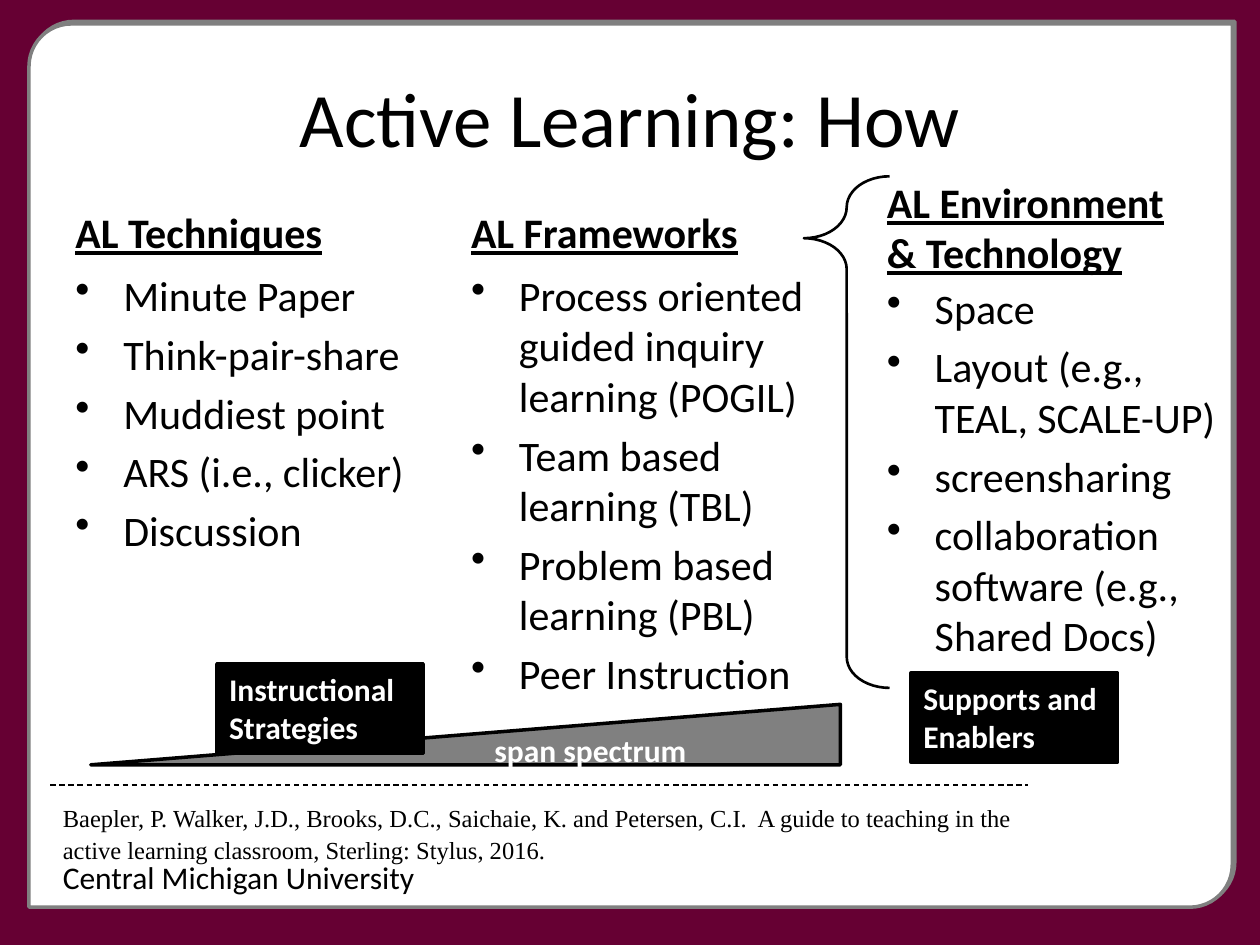
import pptx
import pptx.util
import pptx.dml.color
import pptx.enum.dml
import pptx.enum.shapes
import pptx.enum.text
import pptx.oxml.ns
import lxml.etree

Inches = pptx.util.Inches
Pt = pptx.util.Pt
SHAPE = pptx.enum.shapes.MSO_SHAPE
ANCHOR = pptx.enum.text.MSO_ANCHOR
ALIGN = pptx.enum.text.PP_ALIGN
FIT = pptx.enum.text.MSO_AUTO_SIZE.SHAPE_TO_FIT_TEXT

COLORS = {
    "maroon": "660033",
    "white": "FFFFFF",
    "gray": "808080",
    "black": "000000",
}
BODY = {"name": "Calibri", "size": Pt(24)}
HEADING = {**BODY, "bold": True, "underline": True}
LABEL = {"name": "Calibri", "size": Pt(18), "bold": True}

# Heading, heading place, list place, list items
COLUMNS = [
    ("AL Techniques", (0.5, 1.39, 3.02, 0.7), (0.5, 2.09, 2.82, 4.32),
     ["Minute Paper", "Think-pair-share", "Muddiest point",
      "ARS (i.e., clicker)", "Discussion"]),
    ("AL Frameworks", (3.64, 1.39, 2.68, 0.7), (3.64, 2.09, 2.92, 4.32),
     ["Process oriented guided inquiry learning (POGIL)",
      "Team based learning (TBL)", "Problem based learning (PBL)",
      "Peer Instruction"]),
    ("AL Environment & Technology", (6.94, 1.55, 2.68, 0.7),
     (6.94, 2.19, 2.82, 4.32),
     ["Space", "Layout (e.g., TEAL, SCALE-UP)", "screensharing",
      "collaboration software (e.g., Shared Docs)"]),
]
REFERENCE = (
    "Baepler, P. Walker, J.D., Brooks, D.C., Saichaie, K. and Petersen, C.I.  "
    "A guide to teaching in the active learning classroom, "
    "Sterling: Stylus, 2016."
)


def rgb(name):
    return pptx.dml.color.RGBColor.from_string(COLORS[name])


def apply_format(target, values):
    for name, value in values.items():
        setattr(target, name, value)


def add_bullet(para):
    properties = para._p.get_or_add_pPr()
    properties.set("marL", str(Inches(0.38)))
    properties.set("indent", str(-Inches(0.38)))
    bullet = lxml.etree.SubElement(properties, pptx.oxml.ns.qn("a:buChar"))
    bullet.set("char", "•")


def write_text(shape, lines, font, color="black", frame=None, para_format=None,
               bullets=False):
    text_frame = shape.text_frame
    apply_format(text_frame, {"word_wrap": True, **(frame or {})})
    for index, line in enumerate(lines):
        para = text_frame.add_paragraph() if index else text_frame.paragraphs[0]
        if bullets:
            add_bullet(para)
        if index:
            para.space_before = Pt(4.8)
        apply_format(para, {"alignment": ALIGN.LEFT, **(para_format or {})})
        span = para.add_run()
        span.text = line
        apply_format(span.font, font)
        span.font.color.rgb = rgb(color)


def add_text(shapes, place, lines, font, **options):
    box = shapes.add_textbox(*map(Inches, place))
    write_text(box, lines, font, **options)
    return box


def add_shape(page, kind, place, fill=None, line="black", width=2, adjust=()):
    shape = page.shapes.add_shape(kind, *map(Inches, place))
    shape.shadow.inherit = False
    for index, value in enumerate(adjust):
        shape.adjustments[index] = value
    if fill:
        shape.fill.solid()
        shape.fill.fore_color.rgb = rgb(fill)
    else:
        shape.fill.background()
    shape.line.color.rgb = rgb(line)
    shape.line.width = Pt(width)
    return shape


def add_dashed_line(shapes, start, end):
    line = shapes.add_connector(
        pptx.enum.shapes.MSO_CONNECTOR.STRAIGHT, *map(Inches, start + end))
    line.line.color.rgb = rgb("black")
    line.line.width = Pt(0.75)
    line.line.dash_style = pptx.enum.dml.MSO_LINE.DASH
    lxml.etree.SubElement(line._element.spPr, pptx.oxml.ns.qn("a:effectLst"))


def add_label(page, place, text):
    label = add_shape(page, SHAPE.RECTANGLE, place, fill="black")
    write_text(label, [text], LABEL, color="white",
               frame={"auto_size": FIT, "vertical_anchor": ANCHOR.TOP})


def main():
    deck = pptx.Presentation()
    deck.slide_width, deck.slide_height = Inches(10), Inches(7.5)
    page = deck.slides.add_slide(deck.slide_layouts[6])

    # Backdrop and footer
    page.background.fill.solid()
    page.background.fill.fore_color.rgb = rgb("maroon")
    for left, top in [(0.25, 0.17), (0.23, 0.19)]:
        add_shape(page, SHAPE.ROUND_2_DIAG_RECTANGLE, (left, top, 9.55, 7.01),
                  fill="white", line="gray", adjust=(0.048, 0))
    add_text(page.shapes, (0.4, 6.76, 4, 0.4), ["Central Michigan University"],
             {"name": "Calibri", "size": Pt(18)})

    # Title
    add_text(page.shapes, (0.5, 0.3, 9, 1.25), ["Active Learning: How"],
             {"name": "Calibri", "size": Pt(44)},
             frame={"vertical_anchor": ANCHOR.MIDDLE},
             para_format={"alignment": ALIGN.CENTER})

    # Three columns
    for heading, heading_place, list_place, items in COLUMNS:
        add_text(page.shapes, heading_place, [heading], HEADING,
                 frame={"vertical_anchor": ANCHOR.BOTTOM})
        add_text(page.shapes, list_place, items, BODY, bullets=True)

    # Reference under a dashed rule
    citation = page.shapes.add_group_shape()
    add_text(citation.shapes, (0.4, 6.31, 7.88, 0.92), [REFERENCE],
             {"name": "Times New Roman", "size": Pt(14)},
             frame={"auto_size": FIT},
             para_format={"line_spacing": 1.07, "space_after": Pt(8)})
    add_dashed_line(citation.shapes, (0.4, 6.23), (8.16, 6.23))

    # Spectrum wedge, rising to the right
    wedge = add_shape(page, SHAPE.RIGHT_TRIANGLE, (0.72, 5.59, 5.95, 0.48),
                      fill="gray")
    wedge._element.spPr.xfrm.set("flipH", "1")
    write_text(wedge, ["span spectrum"], LABEL, color="white",
               frame={"vertical_anchor": ANCHOR.MIDDLE},
               para_format={"alignment": ALIGN.CENTER})

    # Labels and brace
    add_label(page, (1.72, 5.27, 1.64, 0.71), "Instructional Strategies")
    add_label(page, (7.23, 5.34, 1.64, 0.71), "Supports and Enablers")
    add_shape(page, SHAPE.LEFT_BRACE, (6.38, 1.4, 0.68, 4.06), width=1.5,
              adjust=(0.397, 0.121))

    deck.save("out.pptx")


if __name__ == "__main__":
    main()
